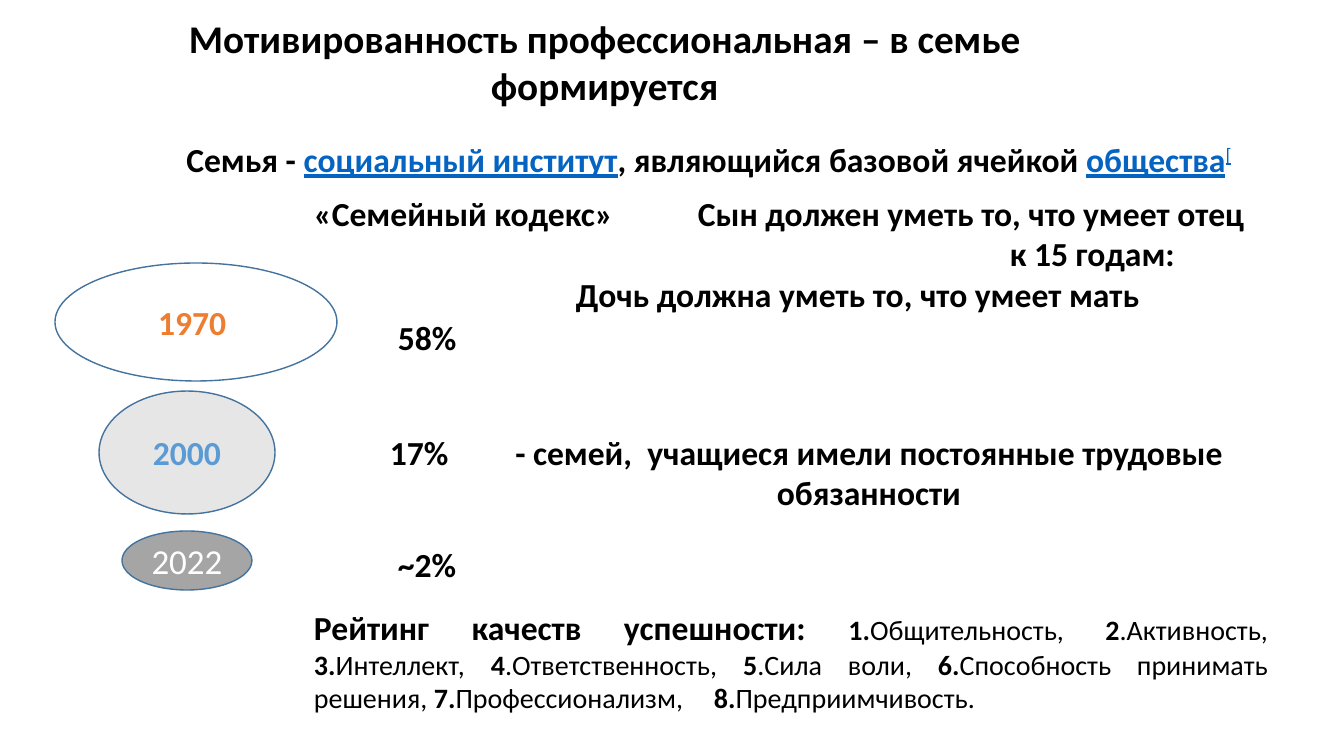
"""Slide on how professional motivation is formed in the family."""
from pptx import Presentation, util as u
from pptx.dml.color import RGBColor
from pptx.enum import shapes, text
from pptx.oxml import parse_xml
from pptx.oxml.ns import nsdecls

PX = u.Inches(1) / 100.8
BLACK = RGBColor(0x00, 0x00, 0x00)
WHITE = RGBColor(0xFF, 0xFF, 0xFF)
PALE = RGBColor(0xE7, 0xE6, 0xE6)
GREY = RGBColor(0xA5, 0xA5, 0xA5)
ORANGE = RGBColor(0xED, 0x7D, 0x31)
SKY = RGBColor(0x5B, 0x9B, 0xD5)
EDGE = RGBColor(0x43, 0x73, 0x9E)
LINK = RGBColor(0x05, 0x63, 0xC1)
ALIGN = text.PP_ALIGN


def style(font, size=24, color=BLACK, bold=True):
    font.name = "Calibri"
    font.size = u.Pt(size)
    font.bold = bold
    font.color.rgb = color


def label(x, y, w, h, words="", align=ALIGN.CENTER, size=24, wrap=True):
    box = slide.shapes.add_textbox(*(round(n * PX) for n in (x, y, w, h)))
    frame = box.text_frame
    frame.word_wrap = wrap
    para = frame.paragraphs[0]
    para.text = words
    para.alignment = align
    for run in para.runs:
        style(run.font, size)
    return box


deck = Presentation()
deck.slide_width = round(1344 * PX)
deck.slide_height = round(756 * PX)
slide = deck.slides.add_slide(deck.slide_layouts[6])

title = label(86, 7, 1037, 110, "Мотивированность профессиональная – в семье формируется", size=28)
title.fill.solid()
title.fill.fore_color.rgb = WHITE
frame = title.text_frame
frame.margin_left = frame.margin_right = frame.margin_top = frame.margin_bottom = round(7 * PX)

years = [
    ("1970 ", 55, 263, 282, 118, WHITE, ORANGE, 24, True),
    ("2000", 99, 391, 176, 123, PALE, SKY, 24, True),
    ("2022", 122, 531, 130, 59, GREY, WHITE, 25, False),
]
for year, x, y, w, h, fill, ink, size, bold in years:
    oval = slide.shapes.add_shape(shapes.MSO_SHAPE.OVAL, *(round(n * PX) for n in (x, y, w, h)))
    oval.shadow.inherit = False
    oval.fill.solid()
    oval.fill.fore_color.rgb = fill
    oval.line.color.rgb = EDGE
    oval.line.width = u.Pt(1)
    oval.text_frame.text = year
    oval.text_frame.vertical_anchor = text.MSO_ANCHOR.MIDDLE
    para = oval.text_frame.paragraphs[0]
    para.alignment = ALIGN.CENTER
    style(para.runs[0].font, size, ink, bold)

family = label(86, 134, 1246, 82).text_frame.paragraphs[0]
for words, link in [
    ("Семья - ", False),
    ("социальный институт", True),
    (", являющийся базовой ячейкой ", False),
    ("общества", True),
    ("[", True),
]:
    run = family.add_run()
    run.text = words
    style(run.font, color=LINK if link else BLACK)
    run.font.underline = link
run.font.bold = False
run.font._element.set("baseline", "30000")

code = label(304, 188, 989, 132).text_frame
for i, (words, left) in enumerate([
    ("«Семейный кодекс»\tСын должен уметь то, что умеет отец", 0),
    ("к 15 годам:", 696),
    ("Дочь должна уметь то, что умеет мать", 262),
]):
    para = code.add_paragraph() if i else code.paragraphs[0]
    para.text = words
    para.alignment = ALIGN.LEFT
    props = para._p.get_or_add_pPr()
    props.set("marL", str(round(left * PX)))
    if "\t" in words:
        props.append(parse_xml(
            f'<a:tabLst {nsdecls("a")}><a:tab pos="{round(384 * PX)}" algn="l"/></a:tabLst>'))
    for run in para.runs:
        style(run.font)

label(496, 427, 746, 92, "- семей,  учащиеся имели постоянные трудовые обязанности")
for share, x, y in [("58%", 388, 312), ("17%", 380, 427), ("~2%", 388, 539)]:
    label(x, y, 80, 50, share, ALIGN.LEFT, wrap=False)

rank = label(304, 602, 974, 119, "Рейтинг качеств успешности: ", ALIGN.JUSTIFY).text_frame.paragraphs[0]
rank._p.get_or_add_pPr().append(parse_xml(
    f'<a:tabLst {nsdecls("a")}><a:tab pos="{round(400 * PX)}" algn="l"/></a:tabLst>'))
for mark, trait in [
    ("1.", "Общительность, "),
    ("2", ".Активность, "),
    ("3.", "Интеллект, "),
    ("4", ".Ответственность, "),
    ("5", ".Сила воли, "),
    ("6.", "Способность принимать решения, "),
    ("7.", "Профессионализм,\t"),
    ("8.", "Предприимчивость."),
]:
    for words, bold in ((mark, True), (trait, False)):
        run = rank.add_run()
        run.text = words
        style(run.font, 20, bold=bold)

deck.save("out.pptx")
